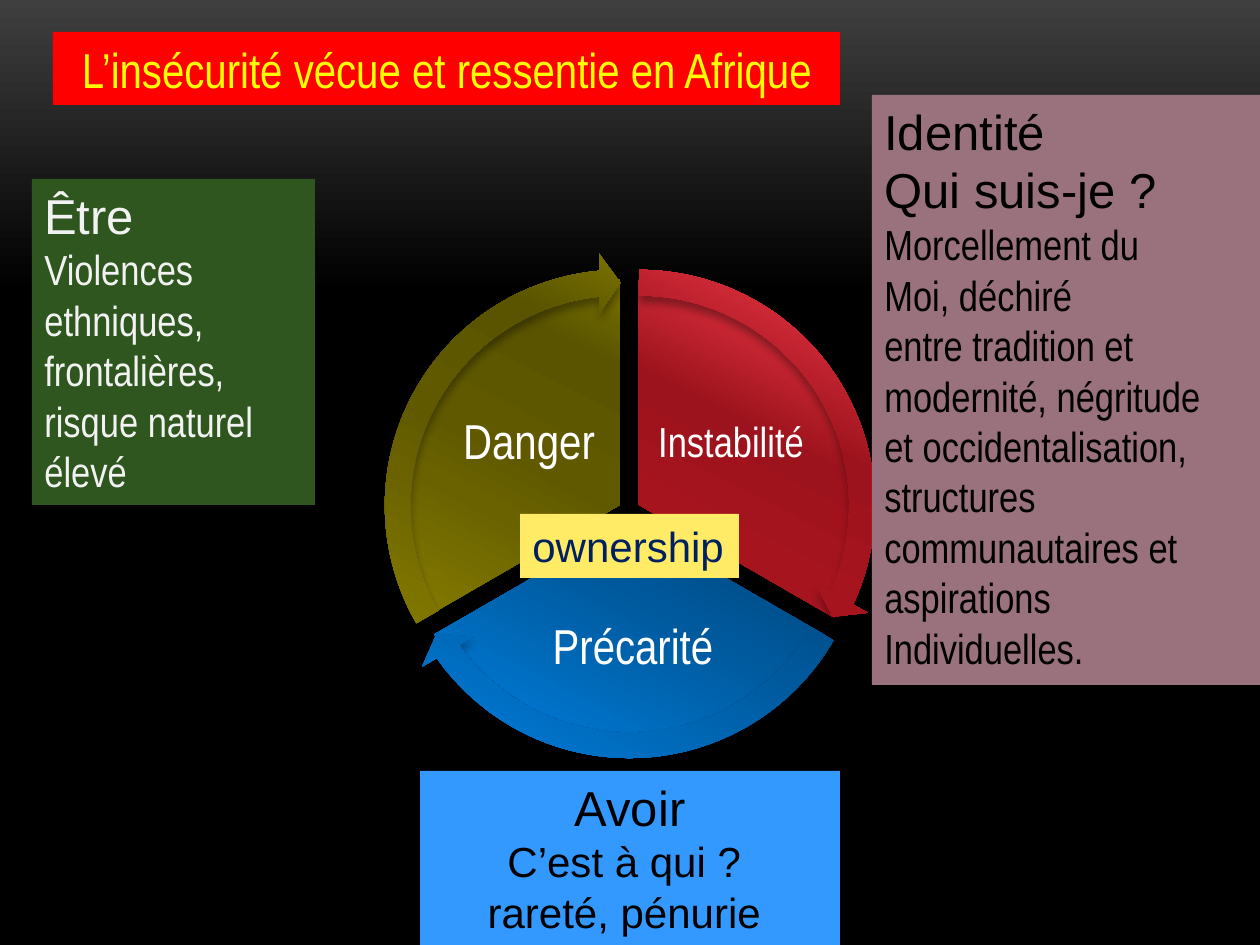
from lxml.etree import SubElement as Sub
from pptx import Presentation
from pptx.dml.color import RGBColor as RGB
from pptx.enum.shapes import MSO_SHAPE as Kind
from pptx.enum.text import MSO_ANCHOR as Anchor, MSO_AUTO_SIZE as Auto, PP_ALIGN as Align
from pptx.oxml.ns import qn
from pptx.util import Emu, Pt

SCALE = 914400 / 126
SANS, SLIM = "Arial", "Arial Narrow"
COLORS = {
    "white": "FFFFFF", "black": "000000", "pale": "F2F2F2", "navy": "002060",
    "red": "FF0000", "yellow": "FFFF00", "green": "2F561E", "mauve": "9A727D",
    "sky": "3399FF", "cream": "FFEB65", "gray": "3F3F3F",
    "ruby": ("FF414F", "9D131D", "A6141E", "B21D27", "F63846"),
    "blue": ("008AF2", "004C85", "00508D", "00599C", "0082E5"),
    "olive": ("A49900", "5A5400", "605900", "6A6200", "9B9000"),
}
STOPS = (0, 30, 50, 60, 100)


def px(*sizes):
    """Turn pixel lengths into EMU."""
    return [Emu(round(size * SCALE)) for size in sizes]


def shade(fill, node, stops, angle):
    """Give a fill a linear gradient, its angle clockwise in degrees."""
    fill.gradient()
    fill.gradient_angle = 360 - angle
    track = node.find(".//" + qn("a:gsLst"))
    for old in list(track):
        track.remove(old)
    for place, color in stops:
        stop = Sub(track, qn("a:gs"), pos=str(place * 1000))
        Sub(stop, qn("a:srgbClr"), val=color)


def write(shape, lines, color, align=Align.LEFT, anchor=Anchor.TOP,
          wrap=True, grow=False, inset=None, space=None):
    """Fill a shape with (text, size, font) lines."""
    frame = shape.text_frame
    frame.word_wrap = wrap
    frame.vertical_anchor = anchor
    frame.auto_size = Auto.SHAPE_TO_FIT_TEXT if grow else Auto.NONE
    if inset is not None:
        frame.margin_left, frame.margin_top, frame.margin_right, frame.margin_bottom = px(*[inset] * 4)
    for i, (text, size, face) in enumerate(lines):
        para = frame.paragraphs[0] if i == 0 else frame.add_paragraph()
        para.alignment = align
        para.line_spacing = space
        run = para.add_run()
        run.text = text
        run.font.size = Pt(size)
        run.font.name = face
        run.font.color.rgb = RGB.from_string(COLORS[color])


def panel(slide, box, fill, lines, color, **form):
    """Draw a flat rectangle with text."""
    shape = slide.shapes.add_shape(Kind.RECTANGLE, *px(*box))
    shape.shadow.inherit = False
    shape.fill.solid()
    shape.fill.fore_color.rgb = RGB.from_string(COLORS[fill])
    shape.line.fill.background()
    write(shape, lines, color, **form)


def glossy(group, kind, box, tone, turns):
    """Draw a shaded part of the wheel with a soft shadow."""
    shape = group.shapes.add_shape(kind, *px(*box))
    for i, turn in enumerate(turns):
        shape.adjustments[i] = turn
    shade(shape.fill, shape.element, zip(STOPS, COLORS[tone]), 117)
    shape.line.fill.background()
    shape.shadow.inherit = False
    cast = Sub(shape.element.spPr.find(qn("a:effectLst")), qn("a:outerShdw"),
               blurRad=str(Pt(5)), dist=str(Pt(4)), dir="5400000", rotWithShape="0")
    hue = Sub(cast, qn("a:srgbClr"), val=COLORS["black"])
    Sub(hue, qn("a:alpha"), val="35000")


def wheel(slide, left, top):
    """Draw the three-part cycle from its top left corner."""
    group = slide.shapes.add_group_shape()
    parts = [
        ("ruby", 19, 0, (162, 18), (14.725, 161.994), "Instabilité", 24, (283, 124, 160, 134)),
        ("blue", 9, 17, (18, 90), (86.72, 18.005), "Précarité", 28, (145, 337, 240, 118)),
        ("olive", 0, 0, (90, 162), (158.73, 90), "Danger", 28, (81, 124, 160, 134)),
    ]
    rim, disc = 505, 450
    gap = (rim - disc) // 2
    for tone, dx, dy, turns, _, text, size, (x, y, wide, high) in parts:
        glossy(group, Kind.PIE, (left + dx + gap, top + dy + gap, disc, disc), tone, turns)
        label = group.shapes.add_textbox(*px(left + x, top + y, wide, high))
        write(label, [(text, size, SLIM)], "white", align=Align.CENTER,
              anchor=Anchor.MIDDLE, inset=4, space=0.9)
    for tone, dx, dy, _, ends, *_ in parts:
        glossy(group, Kind.CIRCULAR_ARROW, (left + dx, top + dy, rim, rim), tone,
               (0.051, 3.275, *ends, 0.059))


def main():
    """Build the slide and save it."""
    deck = Presentation()
    deck.slide_width, deck.slide_height = px(1260, 945)
    slide = deck.slides.add_slide(deck.slide_layouts[6])
    shade(slide.background.fill, slide.element,
          [(0, COLORS["gray"]), (31, COLORS["black"]), (100, COLORS["black"])], 90)
    wheel(slide, 368, 253)
    panel(slide, (53, 32, 787, 73), "red",
          [("L’insécurité vécue et ressentie en Afrique", 28, SLIM)], "yellow",
          align=Align.CENTER, anchor=Anchor.BOTTOM)
    panel(slide, (32, 179, 283, 326), "green",
          [("Être", 28, SANS), ("Violences ethniques, frontalières,", 24, SLIM),
           ("risque naturel élevé", 24, SLIM)], "pale", grow=True)
    moi = ["Morcellement du", "Moi, déchiré", "entre tradition et",
           "modernité, négritude", "et occidentalisation,", "structures",
           "communautaires et", "aspirations", "Individuelles."]
    panel(slide, (872, 95, 388, 590), "mauve",
          [("Identité", 28, SANS), ("Qui suis-je ?", 28, SANS)]
          + [(text, 24, SLIM) for text in moi], "black", grow=True)
    panel(slide, (420, 771, 420, 174), "sky",
          [("Avoir", 28, SANS), ("C’est à qui ? ", 24, SANS),
           ("rareté, pénurie ", 24, SANS)], "black", align=Align.CENTER, grow=True)
    panel(slide, (520, 514, 219, 64), "cream", [("ownership", 24, SANS)], "navy",
          wrap=False, grow=True)
    deck.save("out.pptx")


if __name__ == "__main__":
    main()
